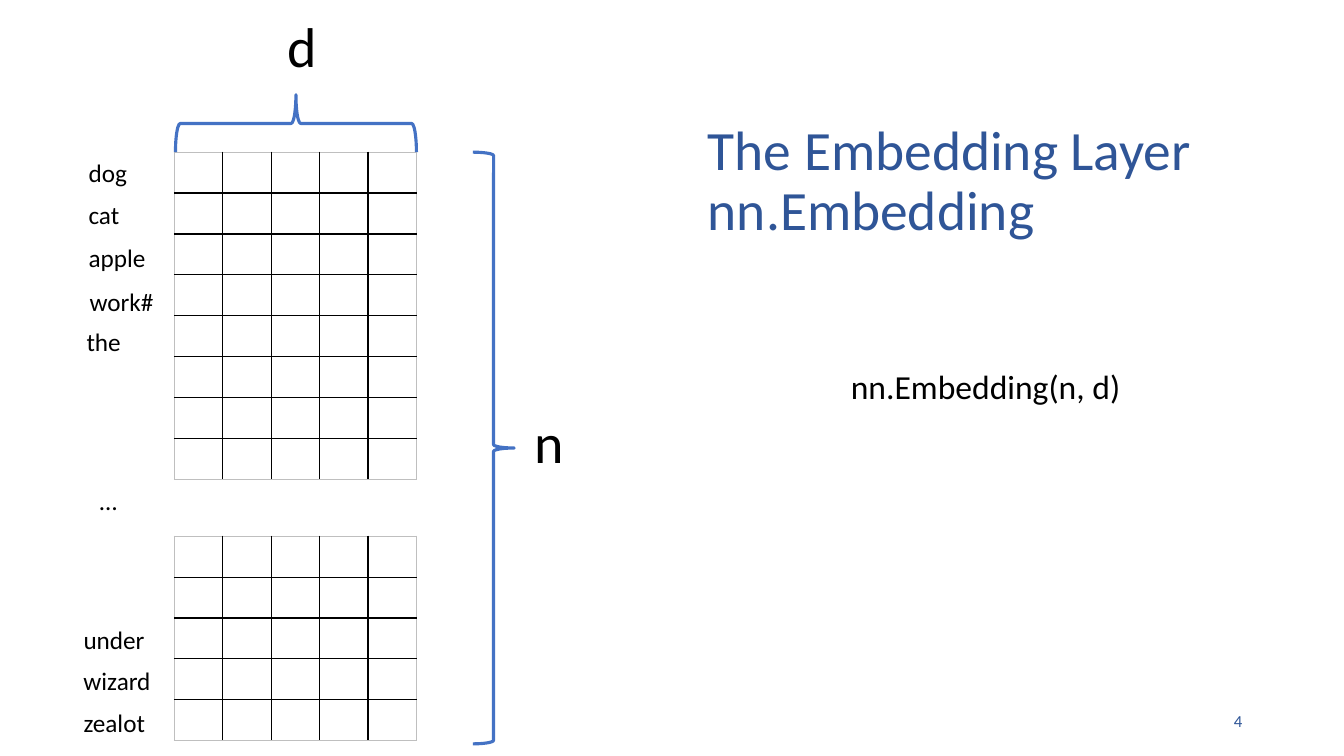
from lxml import etree
from pptx import Presentation
from pptx.dml.color import RGBColor
from pptx.enum import shapes, text
from pptx.oxml.ns import qn
from pptx.util import Inches, Pt

BLACK = RGBColor(0x00, 0x00, 0x00)
GRAY = RGBColor(0xBF, 0xBF, 0xBF)
NAVY = RGBColor(0x2F, 0x55, 0x97)
BLUE = RGBColor(0x44, 0x72, 0xC4)

COLUMNS = 5
CELL_WIDTH = 0.48
ROW_HEIGHT = 0.405
LABEL_HEIGHT = 0.4

WORD_LABELS = [
    ("dog", 0.78, 1.51, 0.59),
    ("cat", 0.78, 1.93, 0.51),
    ("apple", 0.78, 2.36, 0.77),
    ("work#", 0.79, 2.79, 0.84),
    ("the", 0.76, 3.19, 0.55),
    ("…", 0.89, 4.77, 0.38),
    ("under", 0.73, 6.14, 0.82),
    ("wizard", 0.73, 6.55, 0.87),
    ("zealot", 0.73, 6.97, 0.82),
]


def format_font(font, size, color):
    formats = {"name": "Calibri", "size": Pt(size)}
    for name, value in formats.items():
        setattr(font, name, value)
    font.color.rgb = color


def add_label(slide, content, box, size, color=BLACK, wrap=False, **formats):
    shape = slide.shapes.add_textbox(*map(Inches, box))
    frame = shape.text_frame
    frame.word_wrap = wrap
    frame.vertical_anchor = formats.get("anchor", text.MSO_ANCHOR.TOP)
    paragraph = frame.paragraphs[0]
    paragraph.alignment = formats.get("alignment", text.PP_ALIGN.LEFT)
    run = paragraph.add_run()
    run.text = content
    format_font(run.font, size, color)


def add_title(slide, content, box):
    title = slide.shapes.title
    lengths = dict(zip(("left", "top", "width", "height"), map(Inches, box)))
    for name, value in lengths.items():
        setattr(title, name, value)
    frame = title.text_frame
    frame.text = content
    formats = {
        "word_wrap": True,
        "auto_size": text.MSO_AUTO_SIZE.NONE,
        "vertical_anchor": text.MSO_ANCHOR.MIDDLE,
    }
    for name, value in formats.items():
        setattr(frame, name, value)
    paragraph = frame.paragraphs[0]
    paragraph.alignment = text.PP_ALIGN.LEFT
    paragraph.line_spacing = 0.9
    format_font(paragraph.runs[0].font, 39.6, NAVY)


def set_borders(cell, colors):
    properties = cell._tc.get_or_add_tcPr()
    for index, (side, color) in enumerate(colors.items()):
        line = etree.Element(qn(f"a:{side}"), w=str(Pt(1)))
        fill = etree.SubElement(line, qn("a:solidFill"))
        etree.SubElement(fill, qn("a:srgbClr"), val=str(color))
        properties.insert(index, line)


def add_embedding_grid(slide, left, top, rows):
    frame = slide.shapes.add_table(
        rows, COLUMNS, Inches(left), Inches(top),
        Inches(COLUMNS * CELL_WIDTH), Inches(rows * ROW_HEIGHT))
    table = frame.table
    table.first_row = False
    table.horz_banding = False
    for column in table.columns:
        column.width = Inches(CELL_WIDTH)
    for row_index, row in enumerate(table.rows):
        row.height = Inches(ROW_HEIGHT)
        for column_index, cell in enumerate(row.cells):
            cell.fill.background()
            format_font(cell.text_frame.paragraphs[0].font, 18, BLACK)
            outer = {
                "lnL": column_index == 0,
                "lnR": column_index == COLUMNS - 1,
                "lnT": row_index == 0,
                "lnB": row_index == rows - 1,
            }
            set_borders(cell, {side: GRAY if edge else BLACK for side, edge in outer.items()})


def add_brace(slide, box, rotation=0):
    brace = slide.shapes.add_shape(shapes.MSO_SHAPE.RIGHT_BRACE, *map(Inches, box))
    brace.rotation = rotation
    brace.shadow.inherit = False
    brace.fill.background()
    brace.line.color.rgb = BLUE
    brace.line.width = Pt(2.25)


def add_embedding_matrix(slide, left, top):
    add_embedding_grid(slide, left, top, 8)
    add_embedding_grid(slide, left, top + 3.81, 5)
    for word, label_left, label_top, width in WORD_LABELS:
        add_label(slide, word, (label_left, label_top, width, LABEL_HEIGHT), 18)
    add_brace(slide, (left + 2.96, top, 0.41, 5.87))
    add_label(slide, "n", (left + 3.47, top + 2.48, 6.67, 0.77), 40, wrap=True)
    add_brace(slide, (left + 0.92, top - 1.48, 0.57, 2.39), 270)
    add_label(slide, "d", (left + 1.02, top - 1.44, 6.67, 0.77), 40, wrap=True)


def main():
    presentation = Presentation()
    presentation.slide_width = Inches(13.33)
    presentation.slide_height = Inches(7.5)
    slide = presentation.slides.add_slide(presentation.slide_layouts[5])
    add_title(slide, "The Embedding Layer nn.Embedding", (6.92, 1.36, 6.94, 0.9))
    add_embedding_matrix(slide, 1.73, 1.51)
    add_label(slide, "nn.Embedding(n, d)", (8.34, 3.58, 2.9, 0.5), 24)
    add_label(slide, "4", (9.42, 6.95, 3, 0.4), 12, NAVY, wrap=True,
              anchor=text.MSO_ANCHOR.MIDDLE, alignment=text.PP_ALIGN.RIGHT)
    presentation.save("out.pptx")


if __name__ == "__main__":
    main()
